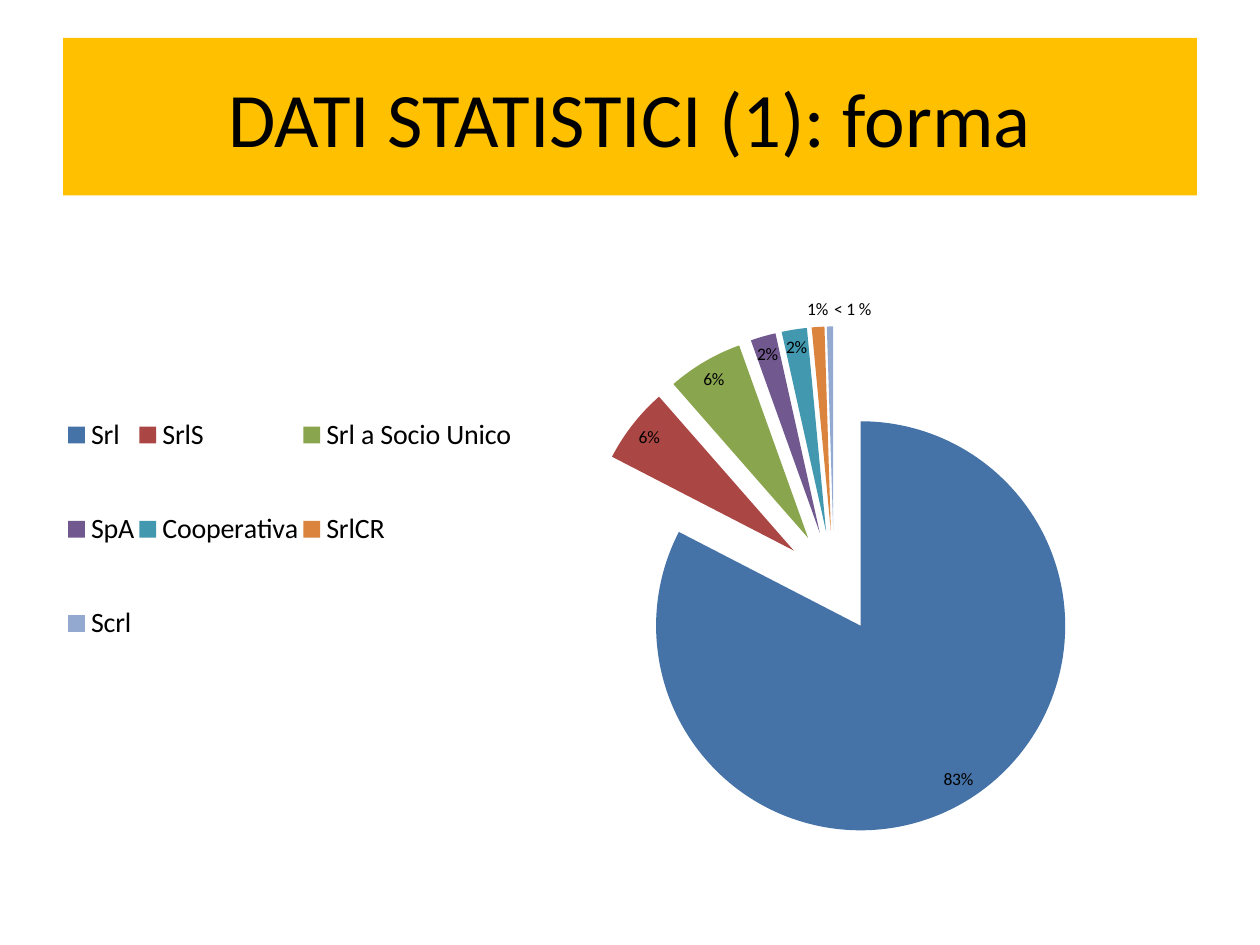
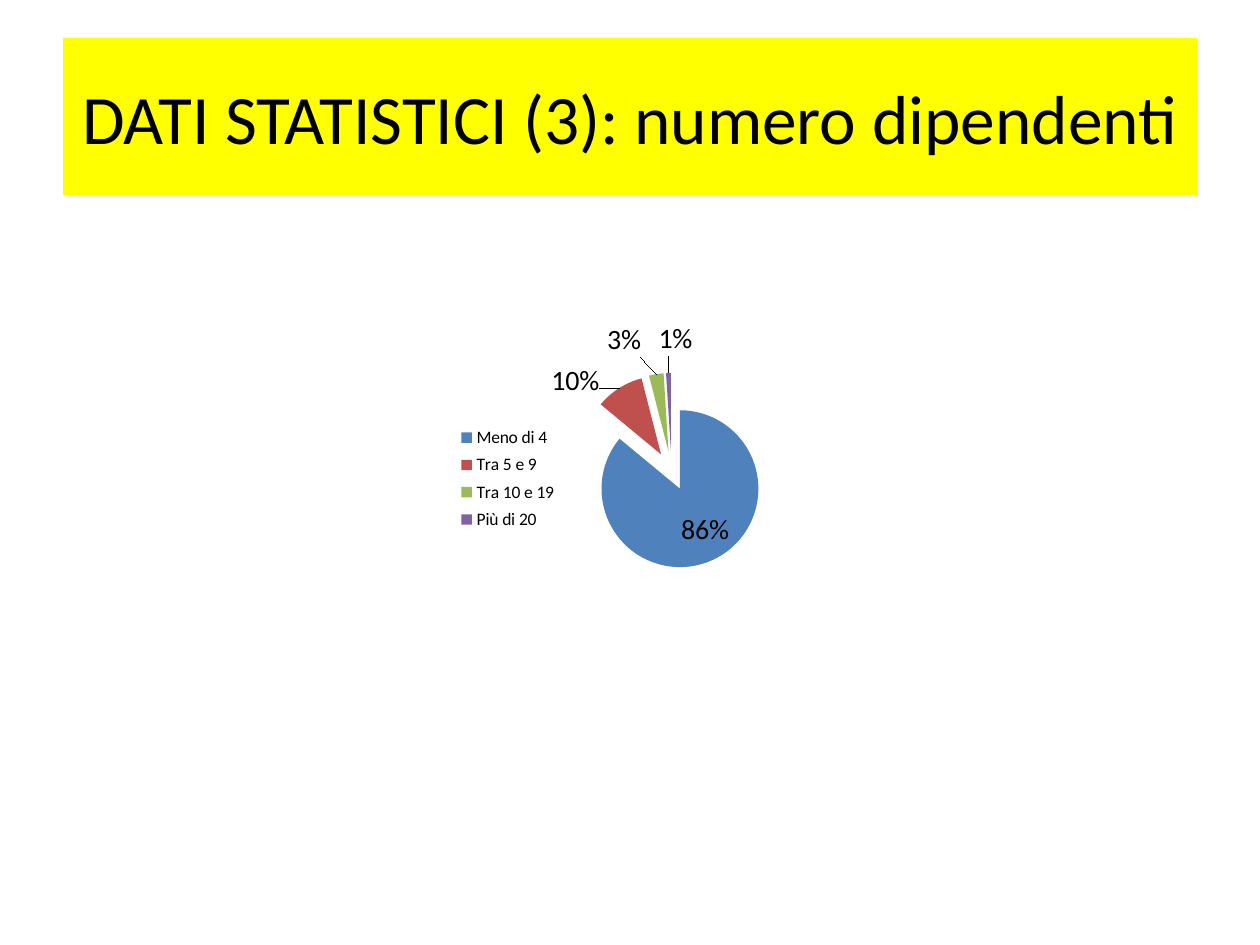
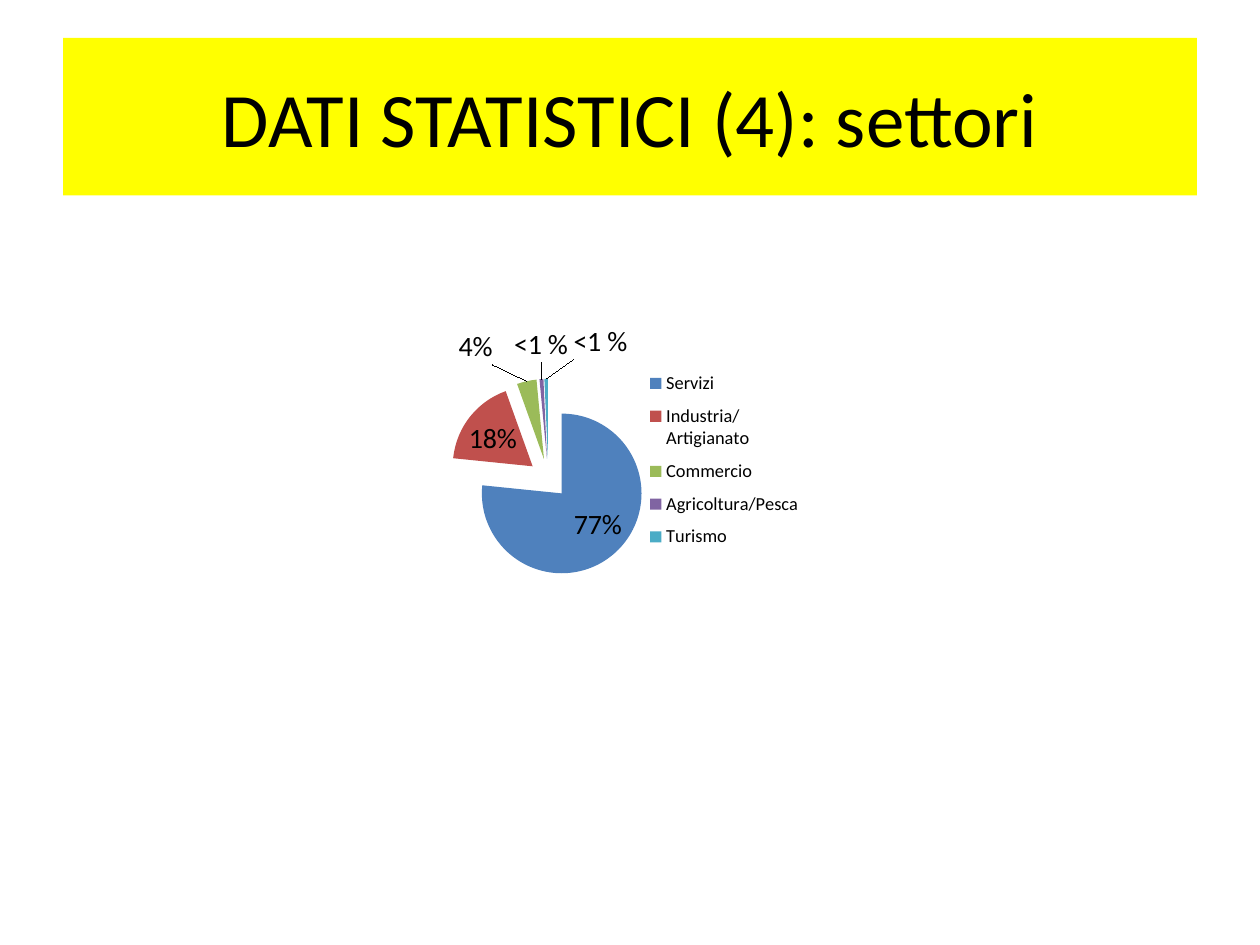
from lxml import etree
from pptx import Presentation
from pptx.chart.data import CategoryChartData
from pptx.dml.color import RGBColor
from pptx.enum.chart import XL_CHART_TYPE, XL_LABEL_POSITION, XL_LEGEND_POSITION
from pptx.enum.text import MSO_ANCHOR, PP_ALIGN
from pptx.oxml.ns import qn
from pptx.util import Pt

PIE = XL_CHART_TYPE.PIE
BEST_FIT = XL_LABEL_POSITION.BEST_FIT
LEGEND_RIGHT = XL_LEGEND_POSITION.RIGHT
MIDDLE = MSO_ANCHOR.MIDDLE
CENTER = PP_ALIGN.CENTER

FONT = "Calibri"
BLACK = RGBColor(0x00, 0x00, 0x00)
ORANGE = RGBColor(0xFF, 0xC0, 0x00)
YELLOW = RGBColor(0xFF, 0xFF, 0x00)
MUTED_PALETTE = [
    RGBColor(0x45, 0x72, 0xA7), RGBColor(0xAA, 0x46, 0x43), RGBColor(0x89, 0xA5, 0x4E),
    RGBColor(0x71, 0x58, 0x8F), RGBColor(0x41, 0x98, 0xAF), RGBColor(0xDB, 0x84, 0x3D),
    RGBColor(0x93, 0xA9, 0xCF),
]
BRIGHT_PALETTE = [
    RGBColor(0x4F, 0x81, 0xBD), RGBColor(0xC0, 0x50, 0x4D), RGBColor(0x9B, 0xBB, 0x59),
    RGBColor(0x80, 0x64, 0xA2), RGBColor(0x4B, 0xAC, 0xC6),
]

SLIDE_SIZE = (720, 540)
TITLE_BOX = (36, 21.6, 648, 90)
EXPLOSION = 25

SLIDES = [
    {
        "title": "DATI STATISTICI (1): forma", "title_size": 44, "band": ORANGE,
        "box": (36, 126, 648, 356.4), "palette": MUTED_PALETTE,
        "values": {"Srl": 83, "SrlS": 6, "Srl a Socio Unico": 6, "SpA": 2,
                   "Cooperativa": 2, "SrlCR": 1, "Scrl": 0.5},
        "plot": (0.42, 0.17, 0.52, 0.82), "legend": (0, 0.22, 0.4, 0.55),
        "legend_size": 16, "label_size": 10,
        "label_texts": {6: "< 1 %"}, "label_shifts": {6: (0.02, 0)},
    },
    {
        "title": "DATI STATISTICI (3): numero dipendenti", "title_size": 39.6, "band": YELLOW,
        "box": (258.5, 182.2, 203.8, 175.7), "palette": BRIGHT_PALETTE,
        "values": {"Meno di 4": 86, "Tra 5 e 9": 10, "Tra 10 e 19": 3, "Più di 20": 1},
        "plot": (0.34, 0.11, 0.55, 0.77), "legend": (0.01, 0.33, 0.29, 0.38),
        "legend_size": 10, "label_size": 16,
        "label_texts": {}, "label_shifts": {2: (-0.04, -0.03), 3: (0.02, -0.03)},
    },
    {
        "title": "DATI STATISTICI (4): settori", "title_size": 44, "band": YELLOW,
        "box": (256.3, 182.2, 207.4, 175.7), "palette": BRIGHT_PALETTE,
        "values": {"Servizi": 77, "Industria/Artigianato": 18, "Commercio": 4,
                   "Agricoltura/Pesca": 0.8, "Turismo": 0.7},
        "plot": (0, 0.04, 0.55, 0.96), "legend": (0.55, 0.14, 0.42, 0.64),
        "legend_size": 10.5, "label_size": 16,
        "label_texts": {3: "<1 %", 4: "<1 %"},
        "label_shifts": {2: (-0.09, -0.03), 3: (0, -0.03), 4: (0.15, -0.04)},
    },
]


def set_attributes(target, values):
    for name, value in values.items():
        setattr(target, name, value)


def format_font(font, size):
    set_attributes(font, {"name": FONT, "size": Pt(size)})
    font.color.rgb = BLACK


def make_layout(**settings):
    layout = etree.Element(qn("c:layout"))
    manual = etree.SubElement(layout, qn("c:manualLayout"))
    for name, value in settings.items():
        etree.SubElement(manual, qn(f"c:{name}")).set("val", str(value))
    return layout


def place_part(part, index, box, **target):
    for layout in part.findall(qn("c:layout")):
        part.remove(layout)
    x, y, width, height = box
    part.insert(index, make_layout(**target, xMode="edge", yMode="edge",
                                   x=x, y=y, w=width, h=height))


def add_title(slide, box, text, size, band):
    title = slide.shapes.title
    set_attributes(title, dict(zip(("left", "top", "width", "height"), map(Pt, box))))
    title.fill.solid()
    title.fill.fore_color.rgb = band
    title.text_frame.text = text
    set_attributes(title.text_frame, {"vertical_anchor": MIDDLE, "word_wrap": True})
    paragraph = title.text_frame.paragraphs[0]
    paragraph.alignment = CENTER
    format_font(paragraph.runs[0].font, size)


def add_labels(chart, content):
    series = chart.plots[0].series[0]
    labels = series.data_labels
    set_attributes(labels, {
        "show_percentage": True, "show_value": False, "position": BEST_FIT,
        "number_format": "0%", "number_format_is_linked": False,
    })
    format_font(labels.font, content["label_size"])
    for index in content["label_shifts"]:
        label = series.points[index].data_label
        if index in content["label_texts"]:
            paragraph = label.text_frame.paragraphs[0]
            run = paragraph.add_run()
            run.text = content["label_texts"][index]
            format_font(run.font, content["label_size"])
        else:
            format_font(label.font, content["label_size"])
        label.position = BEST_FIT
    for label in chart.element.xpath(".//c:dLbl"):
        index = int(label.find(qn("c:idx")).get("val"))
        x, y = content["label_shifts"][index]
        label.insert(1, make_layout(x=x, y=y))
        label.find(qn("c:showVal")).set("val", "0")
        label.find(qn("c:showPercent")).set("val", "1")


def add_pie(slide, box, content):
    data = CategoryChartData()
    data.categories = list(content["values"])
    data.add_series("Series 1", list(content["values"].values()))
    chart = slide.shapes.add_chart(PIE, *map(Pt, box), data).chart
    set_attributes(chart, {"has_title": False, "has_legend": True})
    format_font(chart.font, 10)
    set_attributes(chart.legend, {"position": LEGEND_RIGHT, "include_in_layout": False})
    format_font(chart.legend.font, content["legend_size"])

    plot = chart.plots[0]
    plot.vary_by_categories = True
    explosion = etree.Element(qn("c:explosion"))
    explosion.set("val", str(EXPLOSION))
    chart.element.xpath(".//c:ser/c:tx")[0].addnext(explosion)
    for index, color in enumerate(content["palette"][:len(content["values"])]):
        fill = plot.series[0].points[index].format.fill
        fill.solid()
        fill.fore_color.rgb = color
    add_labels(chart, content)
    place_part(chart.element.xpath(".//c:plotArea")[0], 0, content["plot"], layoutTarget="inner")
    place_part(chart.element.xpath(".//c:legend")[0], 1, content["legend"])


def add_statistics_slide(presentation, content):
    slide = presentation.slides.add_slide(presentation.slide_layouts[5])
    add_title(slide, TITLE_BOX, content["title"], content["title_size"], content["band"])
    add_pie(slide, content["box"], content)


def main():
    presentation = Presentation()
    set_attributes(presentation, dict(zip(("slide_width", "slide_height"), map(Pt, SLIDE_SIZE))))
    for content in SLIDES:
        add_statistics_slide(presentation, content)
    presentation.save("out.pptx")


if __name__ == "__main__":
    main()
